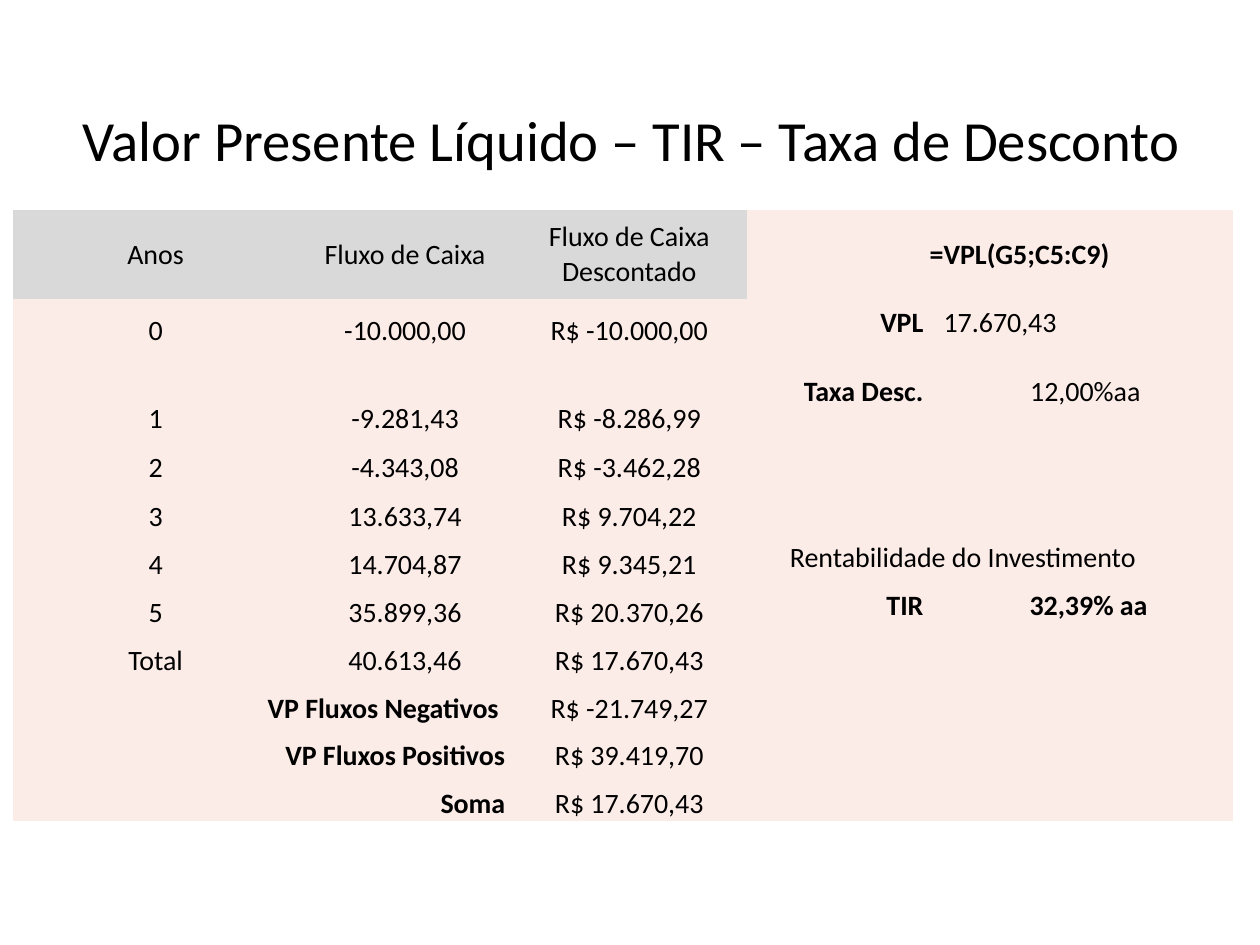
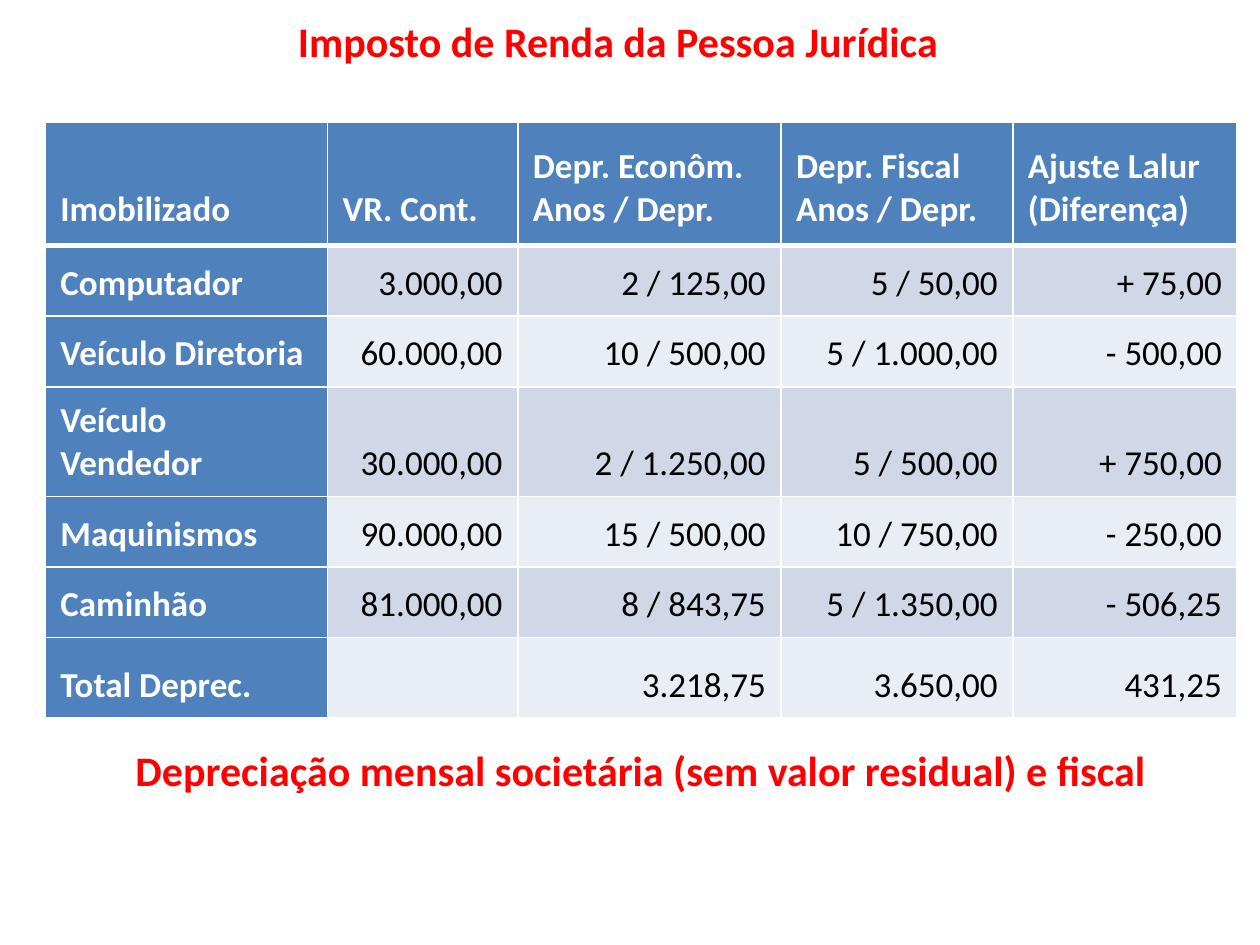
from lxml import etree
from pptx import Presentation
from pptx.dml.color import RGBColor
from pptx.enum.text import MSO_ANCHOR, PP_ALIGN
from pptx.util import Inches, Pt

LEFT, MID, RIGHT = PP_ALIGN.LEFT, PP_ALIGN.CENTER, PP_ALIGN.RIGHT
CENTER, BOTTOM = MSO_ANCHOR.MIDDLE, MSO_ANCHOR.BOTTOM
FONT = "Calibri"
BLACK, WHITE, RED = "000000", "FFFFFF", "FF0000"
GRAY, ROSE, BLUE = "D9D9D9", "FCECE8", "4F81BD"
BANDS = ["D0D8E8", "E9EDF4"]
NO_GRID = "{2D5ABB26-0587-4C30-8999-92F81FD0307C}"
NS = "http://schemas.openxmlformats.org/drawingml/2006/main"


def write(frame, text, size, color=BLACK, bold=False, align=MID):
    frame.text = text
    para = frame.paragraphs[0]
    para.alignment = align
    for run in para.runs:
        run.font.name = FONT
        run.font.size = Pt(size)
        run.font.bold = bold
        run.font.color.rgb = RGBColor.from_string(color)


def add_grid(slide, left, top, widths, heights):
    table = slide.shapes.add_table(
        len(heights), len(widths), Inches(left), Inches(top),
        Inches(sum(widths)), Inches(sum(heights))).table
    table.horz_banding = False
    table._tbl.tblPr[0].text = NO_GRID
    for col, width in zip(table.columns, widths):
        col.width = Inches(width)
    for row, height in zip(table.rows, heights):
        row.height = Inches(height)
    return table


prs = Presentation()
prs.slide_width, prs.slide_height = Inches(10), Inches(7.5)
flow, tax = [prs.slides.add_slide(prs.slide_layouts[6]) for _ in range(2)]

titles = [
    (flow, 0.25, 0.65, 9.52, 0.91, "Valor Presente Líquido – TIR – Taxa de Desconto", 32.4, BLACK, False),
    (tax, 0, 0, 9.81, 0.64, "Imposto de Renda da Pessoa Jurídica", 24, RED, True),
    (tax, 0.18, 5.79, 9.81, 0.64, "Depreciação mensal societária (sem valor residual) e fiscal", 24, RED, True),
]
for slide, left, top, width, height, text, size, color, bold in titles:
    frame = slide.shapes.add_textbox(Inches(left), Inches(top), Inches(width), Inches(height)).text_frame
    frame.word_wrap = True
    frame.vertical_anchor = CENTER
    write(frame, text, size, color, bold)

flows = [
    ("Anos", "Fluxo de Caixa", "Fluxo de Caixa Descontado"),
    ("0", "-10.000,00", "R$ -10.000,00"),
    ("1", "-9.281,43", "R$ -8.286,99"),
    ("2", "-4.343,08", "R$ -3.462,28"),
    ("3", "13.633,74", "R$ 9.704,22"),
    ("4", "14.704,87", "R$ 9.345,21"),
    ("5", "35.899,36", "R$ 20.370,26"),
    ("Total", "40.613,46", "R$ 17.670,43"),
    ("VP Fluxos Negativos", "", "R$ -21.749,27"),
    ("VP Fluxos Positivos", "", "R$ 39.419,70"),
    ("Soma", "", "R$ 17.670,43"),
]
notes = [
    (0, 5, "=VPL(G5;C5:C9)", True, LEFT, 0),
    (1, 4, "VPL", True, RIGHT, 0.05),
    (1, 5, "17.670,43", False, LEFT, 0.11),
    (2, 4, "Taxa Desc.", True, RIGHT, 0.05),
    (2, 5, "12,00%", False, RIGHT, 0),
    (2, 6, "aa", False, LEFT, 0),
    (5, 4, "Rentabilidade do Investimento", False, LEFT, 0.05),
    (6, 4, "TIR", True, RIGHT, 0.05),
    (6, 5, "32,39%", True, RIGHT, 0),
    (6, 6, "aa", True, LEFT, 0.05),
]
grid = add_grid(flow, 0.1, 1.67, [2.27, 1.69, 1.87, 0.29, 1.16, 1.46, 0.31, 0.13, 0.51],
                [0.7, 0.39, 0.7, 0.39, 0.39] + [0.38] * 6)
for r in range(len(flows)):
    first, last = (7, 8) if r < 5 else (4, 8) if r == 5 else (6, 7)
    grid.cell(r, first).merge(grid.cell(r, last))
    if r > 7:
        grid.cell(r, 0).merge(grid.cell(r, 1))
    for c in range(9):
        cell = grid.cell(r, c)
        cell.margin_left = cell.margin_right = cell.margin_top = cell.margin_bottom = 0
        cell.fill.solid()
        cell.fill.fore_color.rgb = RGBColor.from_string(GRAY if r == 0 and c < 3 else ROSE)
        cell.vertical_anchor = BOTTOM if r and c < 3 else CENTER
    for c, text in enumerate(flows[r]):
        if text:
            label = r > 7 and c == 0
            write(grid.cell(r, c).text_frame, text, 16, bold=label, align=RIGHT if label else MID)
            if label:
                grid.cell(r, c).margin_right = Inches(0.1 if r == 8 else 0.05)
for r, c, text, bold, align, gap in notes:
    cell = grid.cell(r, c)
    write(cell.text_frame, text, 16, bold=bold, align=align)
    if align == RIGHT:
        cell.margin_right = Inches(gap)
    else:
        cell.margin_left = Inches(gap)

assets = [
    ("Imobilizado", "VR. Cont.", "Depr. Econôm. Anos / Depr.", "Depr. Fiscal Anos / Depr.", "Ajuste Lalur (Diferença)"),
    ("Computador", "3.000,00", "2 / 125,00", "5 / 50,00", "+ 75,00"),
    ("Veículo Diretoria", "60.000,00", "10 / 500,00", "5 / 1.000,00", "- 500,00"),
    ("Veículo Vendedor", "30.000,00", "2 / 1.250,00", "5 / 500,00", "+ 750,00"),
    ("Maquinismos", "90.000,00", "15 / 500,00", "10 / 750,00", "- 250,00"),
    ("Caminhão", "81.000,00", "8 / 843,75", "5 / 1.350,00", "- 506,25"),
    ("Total Deprec.", "", "3.218,75", "3.650,00", "431,25"),
]
grid = add_grid(tax, 0.36, 0.97, [2.24, 1.51, 2.09, 1.84, 1.78],
                [0.98, 0.56, 0.56, 0.87, 0.56, 0.56, 0.64])
for r, row in enumerate(assets):
    for c, text in enumerate(row):
        cell = grid.cell(r, c)
        head = r == 0 or c == 0
        cell.margin_left = cell.margin_right = Inches(0.12)
        cell.margin_top = cell.margin_bottom = Inches(0.09 if r else 0.12)
        cell.vertical_anchor = BOTTOM
        cell.fill.solid()
        cell.fill.fore_color.rgb = RGBColor.from_string(BLUE if head else BANDS[(r - 1) % 2])
        if text:
            write(cell.text_frame, text, 20, WHITE if head else BLACK, head, LEFT if head else RIGHT)
        props = cell._tc.get_or_add_tcPr()
        for i, side in enumerate(["lnL", "lnR", "lnT", "lnB"]):
            thick = (r, side) in [(0, "lnB"), (1, "lnT")]
            line = etree.Element(f"{{{NS}}}{side}", w=str(Pt(3 if thick else 1)))
            solid = etree.SubElement(line, f"{{{NS}}}solidFill")
            etree.SubElement(solid, f"{{{NS}}}srgbClr", val=WHITE)
            props.insert(i, line)

prs.save("out.pptx")
